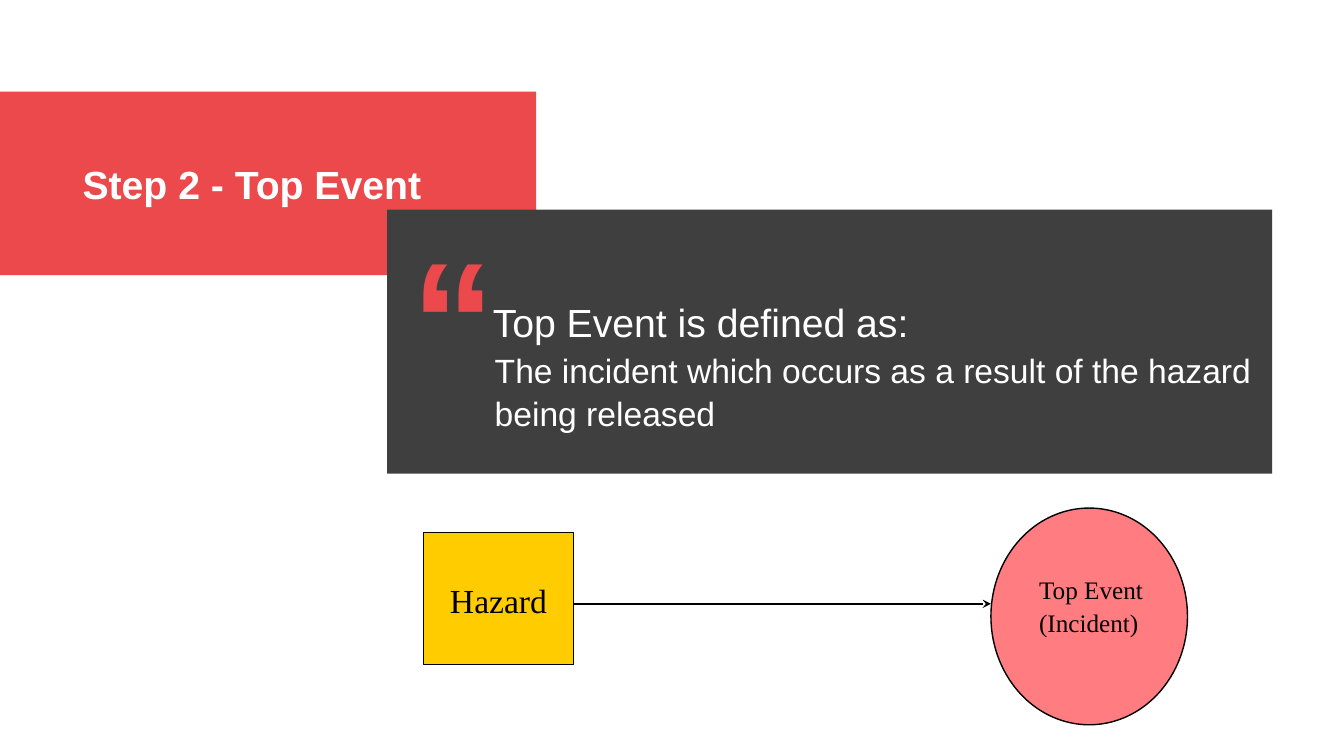
from dataclasses import dataclass

from lxml.etree import SubElement
from pptx import Presentation
from pptx.dml.color import RGBColor
from pptx.enum.shapes import MSO_CONNECTOR, MSO_SHAPE
from pptx.enum.text import MSO_ANCHOR, MSO_AUTO_SIZE, PP_ALIGN
from pptx.oxml.ns import qn
from pptx.util import Pt


@dataclass(frozen=True)
class Theme:
    """Colours, fonts and type sizes of the slide."""
    red: str = "EB494B"
    charcoal: str = "3F3F3F"
    white: str = "FFFFFF"
    black: str = "000000"
    yellow: str = "FFCC00"
    pink: str = "FF7C80"
    sans: str = "Arial"
    serif: str = "Times New Roman"
    quote_size: int = 120
    heading_size: int = 28
    body_size: int = 24
    label_size: int = 18
    line_spacing: float = 1.07
    outline_width: int = 1


THEME = Theme()


def set_attributes(target, values):
    """Set each named value on the target."""
    for name, value in values.items():
        setattr(target, name, value)


def write_text(shape, lines, size, color, font=THEME.sans, bold=False,
               align=PP_ALIGN.LEFT, anchor=MSO_ANCHOR.TOP, wrap=False,
               auto_size=MSO_AUTO_SIZE.SHAPE_TO_FIT_TEXT):
    """Fill a shape with one formatted paragraph per line."""
    frame = shape.text_frame
    frame.text = "\n".join(lines)
    set_attributes(frame, {"word_wrap": wrap, "auto_size": auto_size,
                           "vertical_anchor": anchor})
    for paragraph in frame.paragraphs:
        set_attributes(paragraph, {"alignment": align,
                                   "line_spacing": THEME.line_spacing})
        run_font = paragraph.runs[0].font
        set_attributes(run_font, {"name": font, "size": Pt(size), "bold": bold})
        run_font.color.rgb = RGBColor.from_string(color)


def add_block(slide, kind, box, fill, outline=None):
    """Add a filled preset shape, with an outline if a colour is given."""
    shape = slide.shapes.add_shape(kind, *map(Pt, box))
    shape.shadow.inherit = False
    shape.fill.solid()
    shape.fill.fore_color.rgb = RGBColor.from_string(fill)
    if outline:
        shape.line.color.rgb = RGBColor.from_string(outline)
        shape.line.width = Pt(THEME.outline_width)
    else:
        shape.line.fill.background()
    return shape


def add_text(slide, box, lines, size, color, **options):
    """Add a text box."""
    shape = slide.shapes.add_textbox(*map(Pt, box))
    write_text(shape, lines, size, color, **options)


def add_title(slide, box, text):
    """Place the title on top of what has been drawn so far."""
    title = slide.shapes.title
    names = ("left", "top", "width", "height")
    set_attributes(title, dict(zip(names, map(Pt, box))))
    write_text(title, [text], THEME.heading_size, THEME.white, bold=True)
    return title


def add_arrow(slide, start, end):
    """Add a straight line with a stealth head at its end."""
    arrow = slide.shapes.add_connector(MSO_CONNECTOR.STRAIGHT,
                                       *map(Pt, start + end))
    arrow.line.color.rgb = RGBColor.from_string(THEME.black)
    arrow.line.width = Pt(THEME.outline_width)
    SubElement(arrow.line._get_or_add_ln(), qn("a:tailEnd"), type="stealth")
    SubElement(arrow.element.spPr, qn("a:effectLst"))


def add_definition(slide):
    """Add the dark panel with the quotation mark and the definition."""
    add_block(slide, MSO_SHAPE.RECTANGLE, (276.5, 149.8, 632.2, 188.6),
              THEME.charcoal)
    add_text(slide, (260.6, 138.2, 127.4, 152.6), ["“"], THEME.quote_size,
             THEME.red, bold=True, align=PP_ALIGN.CENTER, wrap=True)
    add_text(slide, (344.9, 207.4, 315.4, 41), ["Top Event is defined as:"],
             THEME.heading_size, THEME.white)
    add_text(slide, (346.3, 244.1, 560.2, 65.5),
             ["The incident which occurs as a result of the hazard",
              "being released"], THEME.body_size, THEME.white)


def add_diagram(slide):
    """Add the hazard, the top event and the arrow between them."""
    hazard = add_block(slide, MSO_SHAPE.RECTANGLE, (302.4, 380.2, 107.3, 94.3),
                       THEME.yellow, THEME.black)
    write_text(hazard, ["Hazard"], THEME.body_size, THEME.black,
               font=THEME.serif, align=PP_ALIGN.CENTER,
               anchor=MSO_ANCHOR.MIDDLE, auto_size=MSO_AUTO_SIZE.NONE)
    add_block(slide, MSO_SHAPE.OVAL, (707.8, 362.9, 140.4, 154.8),
              THEME.pink, THEME.black)
    add_text(slide, (735.1, 405.4, 121, 72.7), ["Top Event", "(Incident)"],
             THEME.label_size, THEME.black, font=THEME.serif)
    add_arrow(slide, (409.7, 431.3), (707.8, 431.3))


def main():
    """Build the slide and save it."""
    presentation = Presentation()
    set_attributes(presentation, {"slide_width": Pt(960),
                                  "slide_height": Pt(540)})
    slide = presentation.slides.add_slide(presentation.slide_layouts[5])
    title = add_title(slide, (51.8, 108.7, 259.2, 41), "Step 2 - Top Event")
    band = add_block(slide, MSO_SHAPE.RECTANGLE, (0, 65.5, 383, 131), THEME.red)
    title.element.addprevious(band.element)
    add_definition(slide)
    add_diagram(slide)
    presentation.save("out.pptx")


if __name__ == "__main__":
    main()
